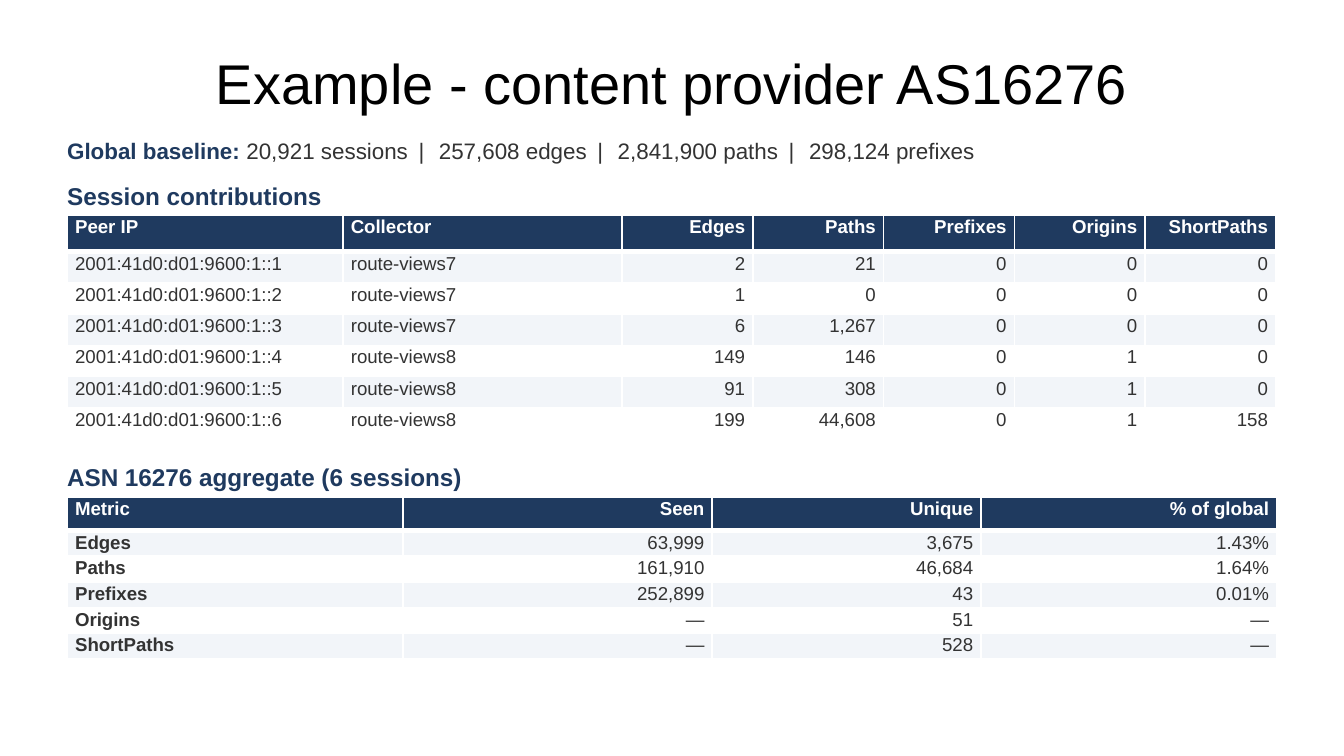
import pptx
import pptx.dml.color
import pptx.enum.text
import pptx.oxml
import pptx.oxml.ns
import pptx.util
from pptx.util import Cm

COLORS = {"navy": "1F3A5F", "ink": "333333", "band": "F2F5F9",
          "white": "FFFFFF", "black": "000000"}
ALIGN = pptx.enum.text.PP_ALIGN
ANCHOR = pptx.enum.text.MSO_ANCHOR
LEFT, WIDTH = Cm(1.27), Cm(22.86)

BASELINE = ["20,921 sessions", "257,608 edges", "2,841,900 paths", "298,124 prefixes"]
SESSIONS = [
    ["Peer IP", "Collector", "Edges", "Paths", "Prefixes", "Origins", "ShortPaths"],
    ["2001:41d0:d01:9600:1::1", "route-views7", "2", "21", "0", "0", "0"],
    ["2001:41d0:d01:9600:1::2", "route-views7", "1", "0", "0", "0", "0"],
    ["2001:41d0:d01:9600:1::3", "route-views7", "6", "1,267", "0", "0", "0"],
    ["2001:41d0:d01:9600:1::4", "route-views8", "149", "146", "0", "1", "0"],
    ["2001:41d0:d01:9600:1::5", "route-views8", "91", "308", "0", "1", "0"],
    ["2001:41d0:d01:9600:1::6", "route-views8", "199", "44,608", "0", "1", "158"],
]
AGGREGATE = [
    ["Metric", "Seen", "Unique", "% of global"],
    ["Edges", "63,999", "3,675", "1.43%"],
    ["Paths", "161,910", "46,684", "1.64%"],
    ["Prefixes", "252,899", "43", "0.01%"],
    ["Origins", "—", "51", "—"],
    ["ShortPaths", "—", "528", "—"],
]


def rgb(name):
    return pptx.dml.color.RGBColor.from_string(COLORS[name])


def add_span(para, text, size, color, bold=False):
    span = para.add_run()
    span.text = text
    span.font.name = "Arial"
    span.font.size = pptx.util.Pt(size)
    span.font.bold = bold
    span.font.color.rgb = rgb(color)
    return span


def add_box(page, top, height, anchor=ANCHOR.TOP):
    """Add a full-width text box without margins and return its paragraph."""
    frame = page.shapes.add_textbox(LEFT, top, WIDTH, height).text_frame
    frame.word_wrap = True
    frame.vertical_anchor = anchor
    frame.margin_left = frame.margin_right = frame.margin_top = frame.margin_bottom = 0
    return frame.paragraphs[0]


def add_title(page, text):
    para = add_box(page, Cm(0.58), Cm(1.96), ANCHOR.MIDDLE)
    para.alignment = ALIGN.CENTER
    add_span(para, text, 30, "black")


def add_baseline(page):
    para = add_box(page, Cm(2.59), Cm(0.71))
    add_span(para, "Global baseline: ", 12, "navy", True)
    for index, figure in enumerate(BASELINE):
        if index:
            divider = add_span(para, " | ", 12, "ink")
            divider.font._element.set("spc", "222")  # widen the gaps around the bar
        add_span(para, figure, 12, "ink")


def add_heading(page, top, text):
    add_span(add_box(page, top, Cm(0.61)), text, 13, "navy", True)


def set_borders(cell, top, bottom):
    """Draw white cell edges; top and bottom widths are in points."""
    properties = cell._tc.get_or_add_tcPr()
    for index, (side, points) in enumerate(
            [("L", 1), ("R", 1), ("T", top), ("B", bottom)]):
        edge = pptx.oxml.parse_xml(
            f'<a:ln{side} {pptx.oxml.ns.nsdecls("a")} w="{pptx.util.Pt(points)}">'
            f'<a:solidFill><a:srgbClr val="{COLORS["white"]}"/></a:solidFill></a:ln{side}>')
        properties.insert(index, edge)


def fill_cell(cell, text, fill, color, bold, align):
    cell.margin_left = cell.margin_right = Cm(0.15)
    cell.margin_top = cell.margin_bottom = Cm(0.03)
    cell.fill.solid()
    cell.fill.fore_color.rgb = rgb(fill)
    para = cell.text_frame.paragraphs[0]
    para.alignment = align
    add_span(para, text, 10, color, bold)


def add_grid(page, top, rows, widths, header_height, row_height, text_columns, bold_first):
    """Add a banded table whose columns after text_columns are right-aligned."""
    heights = [header_height] + [row_height] * (len(rows) - 1)
    table = page.shapes.add_table(
        len(rows), len(widths), LEFT, top, sum(widths), sum(heights)).table
    for column, width in zip(table.columns, widths):
        column.width = width
    for y, (row, height) in enumerate(zip(rows, heights)):
        table.rows[y].height = height
        header = y == 0
        fill = "navy" if header else "band" if y % 2 else "white"
        for x, text in enumerate(row):
            cell = table.cell(y, x)
            fill_cell(cell, text, fill, "white" if header else "ink",
                      header or (bold_first and x == 0),
                      ALIGN.LEFT if x < text_columns else ALIGN.RIGHT)
            set_borders(cell, 3 if y == 1 else 1, 3 if header else 1)


def main():
    deck = pptx.Presentation()
    deck.slide_width, deck.slide_height = Cm(25.4), Cm(14.29)
    page = deck.slides.add_slide(deck.slide_layouts[6])
    add_title(page, "Example - content provider AS16276")
    add_baseline(page)
    add_heading(page, Cm(3.43), "Session contributions")
    add_grid(page, Cm(4.06), SESSIONS, [Cm(5.21), Cm(5.28)] + [Cm(2.47)] * 5,
             Cm(0.7), Cm(0.59), text_columns=2, bold_first=False)
    add_heading(page, Cm(8.74), "ASN 16276 aggregate (6 sessions)")
    add_grid(page, Cm(9.4), AGGREGATE, [Cm(6.35), Cm(5.84), Cm(5.08), Cm(5.59)],
             Cm(0.63), Cm(0.47), text_columns=1, bold_first=True)
    deck.save("out.pptx")


if __name__ == "__main__":
    main()
